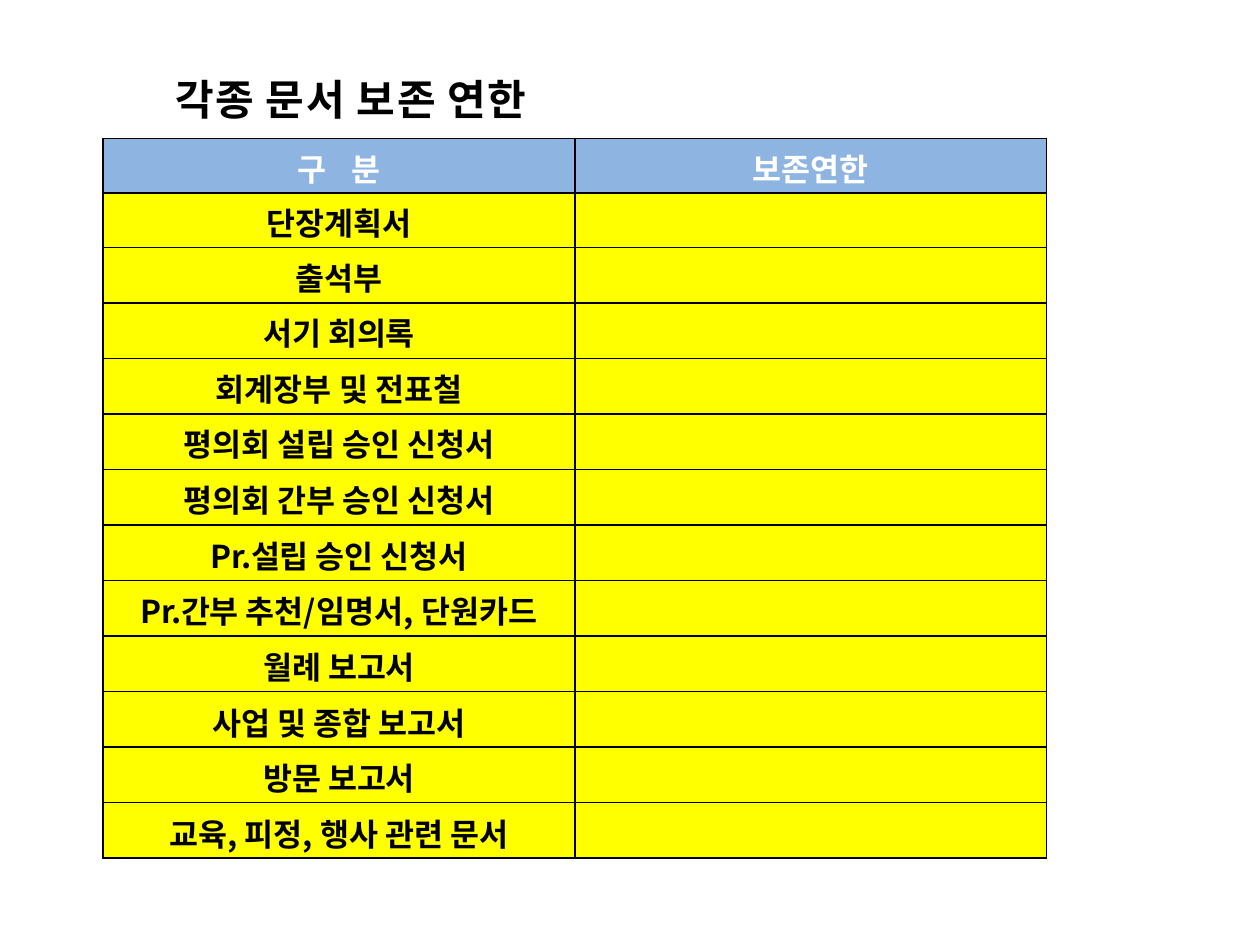
from dataclasses import dataclass

import pptx
import pptx.dml.color
import pptx.enum.text
import pptx.oxml
import pptx.oxml.ns
import pptx.util

FONT = "Noto Sans CJK KR"
BLACK, WHITE, BLUE, YELLOW = "000000", "FFFFFF", "8EB4E2", "FFFF00"
NAMESPACE = pptx.oxml.ns.nsdecls("a")
COLUMN_WIDTH = 269.5
TOP_ROW_HEIGHT, ROW_HEIGHT = 31.2, 31.73


@dataclass
class Span:
    text: str
    spacing: float = 0


@dataclass
class Entry:
    spans: list[Span]
    inset: float = 3.7


TITLE = [
    Span("각", 1.2), Span("종 ", 0.5), Span("문", 1.2), Span("서 ", 0.5),
    Span("보", 1.2), Span("존 ", 0.5), Span("연한", 1.2),
]
HEADINGS = ["구\t분", "보존연한"]
DOCUMENTS = [
    Entry([Span("단장계획서")]),
    Entry([Span("출석부", -0.1)]),
    Entry([Span("서기 "), Span("회의록", -0.1)]),
    Entry([Span("회계장부 "), Span("및 전표철")]),
    Entry([Span("평의회 ", -0.1), Span("설립 승인 "), Span("신청서", -0.1)]),
    Entry([Span("평의회 ", -0.1), Span("간부 승인 "), Span("신청서", -0.1)], 4),
    Entry([Span("Pr.설립 ", -0.4), Span("승인 신청서")], 4),
    Entry([Span("Pr.간부 ", -0.4), Span("추천/임명서, ", 0.1), Span("단원카드")], 4),
    Entry([Span("월례 "), Span("보고서", -0.1)], 4.2),
    Entry([Span("사업 및 종합 보고서")], 4.2),
    Entry([Span("방문 "), Span("보고서", -0.1)], 4.2),
    Entry([Span("교육, 피정, 행사 관련 문서")], 4.2),
]


def color(value: str) -> pptx.dml.color.RGBColor:
    return pptx.dml.color.RGBColor.from_string(value)


def add_spans(para, spans: list[Span], size: float, ink: str) -> None:
    for span in spans:
        run = para.add_run()
        run.text = span.text
        run.font.name = FONT
        run.font.size = pptx.util.Pt(size)
        run.font.bold = True
        run.font.color.rgb = color(ink)
        properties = run.font._element
        properties.set("spc", str(round(span.spacing * 100)))
        properties.append(pptx.oxml.parse_xml(f'<a:ea {NAMESPACE} typeface="{FONT}"/>'))


def add_tab(para, position: float) -> None:
    para._p.get_or_add_pPr().append(pptx.oxml.parse_xml(
        f'<a:tabLst {NAMESPACE}><a:tab pos="{pptx.util.Pt(position)}" algn="l"/></a:tabLst>'
    ))


def style_cell(cell, fill: str, inset: float) -> None:
    cell.margin_left = cell.margin_right = cell.margin_bottom = 0
    cell.margin_top = pptx.util.Pt(inset)
    properties = cell._tc.get_or_add_tcPr()
    for side in ("lnL", "lnR", "lnT", "lnB"):
        properties.append(pptx.oxml.parse_xml(
            f'<a:{side} {NAMESPACE} w="{pptx.util.Pt(1)}"><a:solidFill>'
            f'<a:srgbClr val="{BLACK}"/></a:solidFill></a:{side}>'
        ))
    cell.fill.solid()
    cell.fill.fore_color.rgb = color(fill)


def write_cell(cell, spans: list[Span], ink: str) -> None:
    para = cell.text_frame.paragraphs[0]
    para.alignment = pptx.enum.text.PP_ALIGN.CENTER
    if any("\t" in span.text for span in spans):
        add_tab(para, 31)
    add_spans(para, spans, 18, ink)


def add_title(slide) -> None:
    title = slide.shapes.title
    title.left, title.top = pptx.util.Pt(100), pptx.util.Pt(41)
    title.width, title.height = pptx.util.Pt(216), pptx.util.Pt(31)
    frame = title.text_frame
    frame.margin_left = frame.margin_right = frame.margin_bottom = 0
    frame.margin_top = pptx.util.Pt(1)
    frame.word_wrap = True
    frame.auto_size = pptx.enum.text.MSO_AUTO_SIZE.SHAPE_TO_FIT_TEXT
    frame.vertical_anchor = pptx.enum.text.MSO_ANCHOR.TOP
    para = frame.paragraphs[0]
    para.alignment = pptx.enum.text.PP_ALIGN.LEFT
    add_spans(para, TITLE, 24, BLACK)


def add_retention_table(slide) -> None:
    row_count = len(DOCUMENTS) + 1
    table = slide.shapes.add_table(
        row_count, 2, pptx.util.Pt(59), pptx.util.Pt(79),
        pptx.util.Pt(2 * COLUMN_WIDTH), pptx.util.Pt(row_count * ROW_HEIGHT),
    ).table
    table.first_row = table.horz_banding = False
    for column in table.columns:
        column.width = pptx.util.Pt(COLUMN_WIDTH)
    for index, row in enumerate(table.rows):
        row.height = pptx.util.Pt(TOP_ROW_HEIGHT if index < 2 else ROW_HEIGHT)
    for index, heading in enumerate(HEADINGS):
        cell = table.cell(0, index)
        style_cell(cell, BLUE, 3.7)
        write_cell(cell, [Span(heading)], WHITE)
    for index, entry in enumerate(DOCUMENTS, start=1):
        for cell in table.rows[index].cells:
            style_cell(cell, YELLOW, entry.inset)
        write_cell(table.cell(index, 0), entry.spans, BLACK)


def main() -> None:
    deck = pptx.Presentation()
    deck.slide_width, deck.slide_height = pptx.util.Pt(720), pptx.util.Pt(540)
    slide = deck.slides.add_slide(deck.slide_layouts[5])
    add_retention_table(slide)
    add_title(slide)
    deck.save("out.pptx")


if __name__ == "__main__":
    main()
